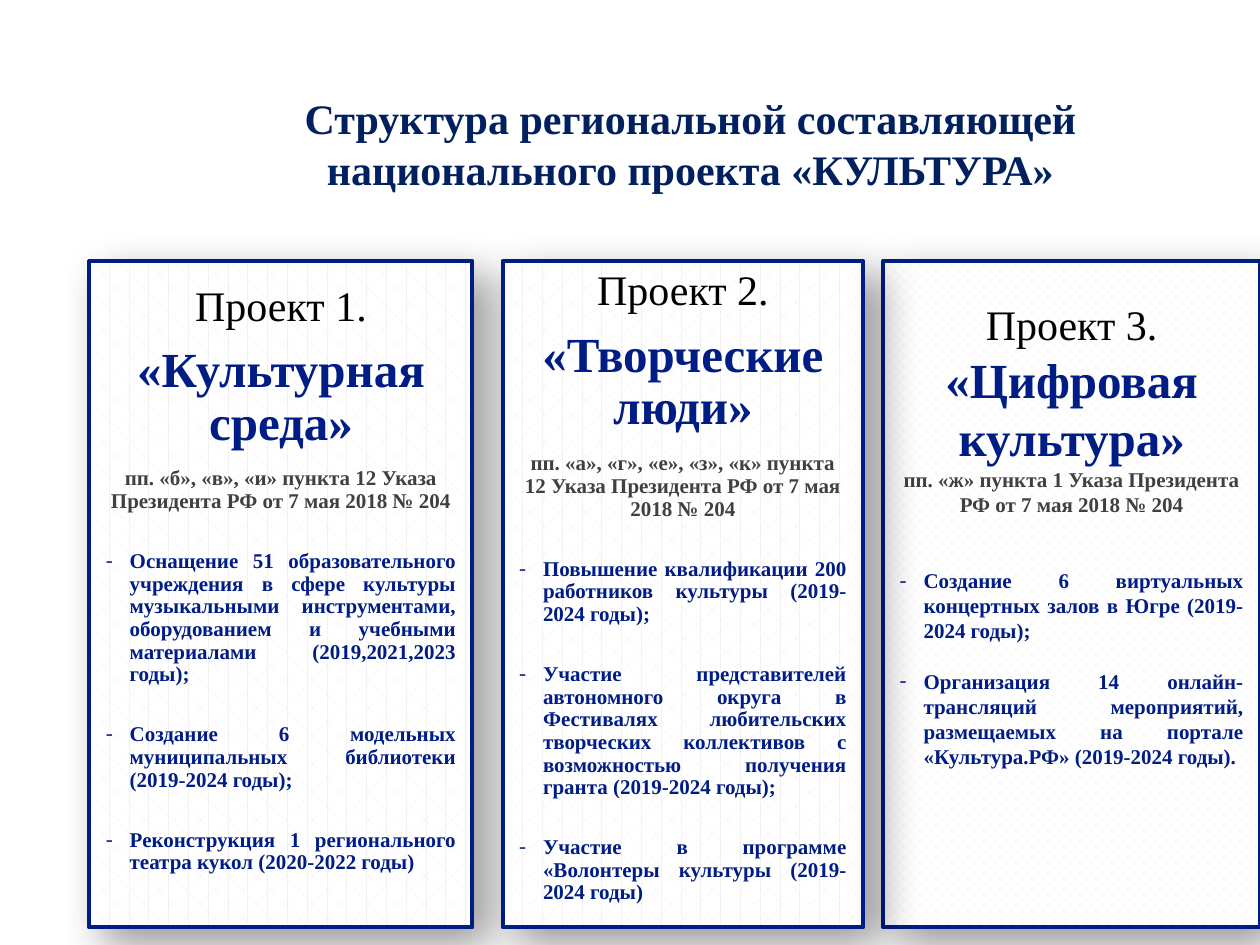
from dataclasses import dataclass

from lxml import etree
from pptx import Presentation
from pptx.dml.color import RGBColor
from pptx.enum import dml, shapes, text
from pptx.oxml import ns
from pptx.util import Inches, Pt

FONT = "Times New Roman"
TITLE_BLUE = RGBColor(0x00, 0x20, 0x60)
BLUE = RGBColor(0x00, 0x1C, 0x85)
BLACK = RGBColor(0x00, 0x00, 0x00)
GREY = RGBColor(0x40, 0x40, 0x40)
PALE = RGBColor(0xF2, 0xF2, 0xF2)
WHITE = RGBColor(0xFF, 0xFF, 0xFF)

CARD_TOP, CARD_HEIGHT = 2.07, 5.29
MARGIN = 0.13
INDENT = 0.19


@dataclass(frozen=True)
class Spacing:
    line: float
    after_ratio: float  # space after a paragraph, as a share of its text size
    after_decree: float
    after_task: float


@dataclass(frozen=True)
class Project:
    left: float
    width: float
    text_top: float
    pattern: dml.MSO_PATTERN
    spacing: Spacing
    number: str
    name: str
    decree: str
    tasks: tuple[str, ...]


TIGHT = Spacing(0.9, 0.35, 21.3, 21.3)
PLAIN = Spacing(1.0, 0, 28.8, 14.4)

PROJECTS = (
    Project(
        0.71, 3.04, 0.19, dml.MSO_PATTERN.DIVOT, TIGHT,
        "Проект 1.", "«Культурная среда»",
        "пп. «б», «в», «и» пункта 12 Указа Президента РФ от 7 мая 2018 № 204",
        (
            "Оснащение 51 образовательного учреждения в сфере культуры музыкальными "
            "инструментами, оборудованием и учебными материалами (2019,2021,2023 годы);",
            "Создание 6 модельных муниципальных библиотеки (2019-2024 годы);",
            "Реконструкция 1 регионального театра кукол (2020-2022 годы)",
        ),
    ),
    Project(
        7.01, 2.99, 0.3, dml.MSO_PATTERN.WEAVE, PLAIN,
        "Проект 3.", "«Цифровая культура»",
        "пп. «ж» пункта 1 Указа Президента РФ от 7 мая 2018 № 204",
        (
            "Создание 6 виртуальных концертных залов в Югре (2019-2024 годы);",
            "Организация 14 онлайн-трансляций мероприятий, размещаемых на портале "
            "«Культура.РФ» (2019-2024 годы).",
        ),
    ),
    Project(
        3.99, 2.86, 0.07, dml.MSO_PATTERN.DIVOT, TIGHT,
        "Проект 2.", "«Творческие люди»",
        "пп. «а», «г», «е», «з», «к» пункта 12 Указа Президента РФ от 7 мая 2018 № 204",
        (
            "Повышение квалификации 200 работников культуры (2019-2024 годы);",
            "Участие представителей автономного округа в Фестивалях любительских "
            "творческих коллективов с возможностью получения гранта (2019-2024 годы);",
            "Участие в программе «Волонтеры культуры (2019-2024 годы)",
        ),
    ),
)


def add_shadow(box) -> None:
    box.shadow.inherit = False
    effects = box._element.spPr.find(ns.qn("a:effectLst"))
    shadow = etree.SubElement(
        effects, ns.qn("a:outerShdw"), blurRad=str(Pt(24)), dist=str(Pt(12)),
        dir=str(45 * 60000), algn="tl", rotWithShape="0",
    )
    color = etree.SubElement(shadow, ns.qn("a:srgbClr"), val=str(BLACK))
    etree.SubElement(color, ns.qn("a:alpha"), val="40000")


def add_dash(para) -> None:
    """Give the paragraph a hanging dash as its bullet."""
    props = para._p.get_or_add_pPr()
    props.set("marL", str(Inches(INDENT)))
    props.set("indent", str(-Inches(INDENT)))
    etree.SubElement(props, ns.qn("a:buFont"), typeface=FONT)
    etree.SubElement(props, ns.qn("a:buChar"), char="-")


def style(para, size: float, color: RGBColor, bold: bool, align: text.PP_ALIGN) -> None:
    para.alignment = align
    for span in para.runs:
        span.font.name = FONT
        span.font.size = Pt(size)
        span.font.bold = bold
        span.font.color.rgb = color


def add_card(slide, project: Project) -> None:
    box = slide.shapes.add_shape(
        shapes.MSO_SHAPE.RECTANGLE, Inches(project.left), Inches(CARD_TOP),
        Inches(project.width), Inches(CARD_HEIGHT),
    )
    box.fill.patterned()
    box.fill.pattern = project.pattern
    box.fill.fore_color.rgb = PALE
    box.fill.back_color.rgb = WHITE
    box.line.color.rgb = BLUE
    box.line.width = Pt(2.25)
    add_shadow(box)

    frame = box.text_frame
    frame.word_wrap = True
    frame.vertical_anchor = text.MSO_ANCHOR.TOP
    frame.margin_left = frame.margin_right = frame.margin_bottom = Inches(MARGIN)
    frame.margin_top = Inches(project.text_top)
    frame.text = "\n".join((project.number, project.name, project.decree, *project.tasks))

    spacing = project.spacing
    number, name, decree, *tasks = frame.paragraphs
    for para in frame.paragraphs:
        para.line_spacing = spacing.line
    number.space_after = Pt(24 * spacing.after_ratio)
    name.space_after = Pt(28 * spacing.after_ratio)
    decree.space_after = Pt(spacing.after_decree)
    style(number, 24, BLACK, False, text.PP_ALIGN.CENTER)
    style(name, 28, BLUE, True, text.PP_ALIGN.CENTER)
    style(decree, 12, GREY, True, text.PP_ALIGN.CENTER)
    for task in tasks:
        task.space_after = Pt(spacing.after_task)
        add_dash(task)
        style(task, 12, BLUE, True, text.PP_ALIGN.JUSTIFY)


def add_title(slide) -> None:
    title = slide.shapes.title
    title.left, title.top = Inches(1.41), Inches(0.7)
    title.width, title.height = Inches(8.14), Inches(0.87)
    frame = title.text_frame
    frame.text = "Структура региональной составляющей национального проекта «КУЛЬТУРА»"
    frame.word_wrap = True
    frame.vertical_anchor = text.MSO_ANCHOR.MIDDLE
    style(frame.paragraphs[0], 24, TITLE_BLUE, True, text.PP_ALIGN.CENTER)


def main() -> None:
    deck = Presentation()
    deck.slide_width, deck.slide_height = Inches(10), Inches(7.5)
    slide = deck.slides.add_slide(deck.slide_layouts[5])
    add_title(slide)
    for project in PROJECTS:
        add_card(slide, project)
    deck.save("out.pptx")


if __name__ == "__main__":
    main()
